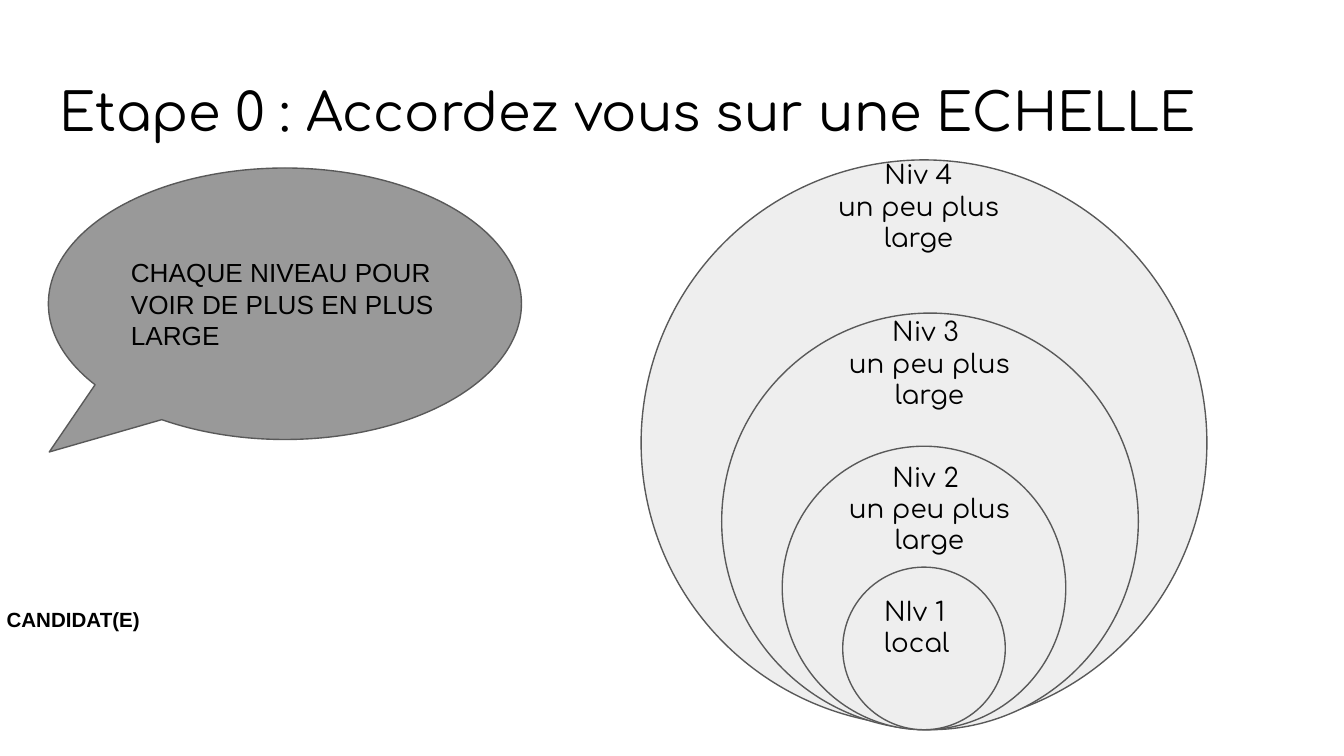
import pptx
import pptx.dml.color
import pptx.enum.shapes
import pptx.enum.text
import pptx.util

Inches = pptx.util.Inches
Pt = pptx.util.Pt
MSO_SHAPE = pptx.enum.shapes.MSO_SHAPE
PP_ALIGN = pptx.enum.text.PP_ALIGN
MSO_ANCHOR = pptx.enum.text.MSO_ANCHOR

HEADING_FONT = "Comfortaa"
BODY_FONT = "Arial"
LINE_PITCH = 1.2


def color(hex_value):
    """Return the colour for a hex string."""
    return pptx.dml.color.RGBColor.from_string(hex_value)


def write_text(frame, text, size, font, align=PP_ALIGN.LEFT, anchor=MSO_ANCHOR.TOP, bold=False):
    """Fill a text frame and format all of its paragraphs."""
    frame.text = text
    frame.word_wrap = True
    frame.auto_size = pptx.enum.text.MSO_AUTO_SIZE.NONE
    frame.vertical_anchor = anchor
    frame.margin_left = frame.margin_right = Inches(0.1)
    frame.margin_top = frame.margin_bottom = Inches(0.1)
    for paragraph in frame.paragraphs:
        paragraph.alignment = align
        paragraph.line_spacing = Pt(size * LINE_PITCH)
        paragraph.space_before = Pt(0)
        for run in paragraph.runs:
            run.font.size = Pt(size)
            run.font.name = font
            run.font.bold = bold
            run.font.color.rgb = color("000000")


def add_title(slide, text):
    """Place and format the title."""
    title = slide.shapes.title
    title.left, title.top = Inches(0.34), Inches(0.49)
    title.width, title.height = Inches(9.32), Inches(0.63)
    write_text(title.text_frame, text, 28, HEADING_FONT)


def add_outlined_shape(slide, kind, left, top, width, height, fill):
    """Add a filled shape with a thin grey outline."""
    shape = slide.shapes.add_shape(kind, Inches(left), Inches(top), Inches(width), Inches(height))
    shape.shadow.inherit = False
    shape.fill.solid()
    shape.fill.fore_color.rgb = color(fill)
    shape.line.color.rgb = color("595959")
    shape.line.width = Pt(0.75)
    return shape


def add_level(slide, left, top, diameter):
    """Add one circle of the scale."""
    add_outlined_shape(slide, MSO_SHAPE.OVAL, left, top, diameter, diameter, "EEEEEE")


def add_label(slide, left, top, width, height, text, size, font, **style):
    """Add a text box."""
    label = slide.shapes.add_textbox(Inches(left), Inches(top), Inches(width), Inches(height))
    write_text(label.text_frame, text, size, font, **style)


def add_callout(slide, text):
    """Add the speech bubble with its tail at the lower left."""
    bubble = add_outlined_shape(
        slide, MSO_SHAPE.OVAL_CALLOUT, 0.36, 1.25, 3.52, 2.02, "999999")
    bubble.adjustments[0] = -0.498
    bubble.adjustments[1] = 0.546
    write_text(bubble.text_frame, text, 14, BODY_FONT, anchor=MSO_ANCHOR.MIDDLE)


def main():
    """Build and save the slide."""
    deck = pptx.Presentation()
    deck.slide_width, deck.slide_height = Inches(10), Inches(10 * 9 / 16)
    slide = deck.slides.add_slide(deck.slide_layouts[5])

    add_title(slide, "Etape 0 : Accordez vous sur une ECHELLE")
    levels = [(4.77, 1.19, 4.21), (5.37, 2.33, 3.1), (5.82, 3.32, 2.11), (6.27, 4.22, 1.21)]
    for left, top, diameter in levels:
        add_level(slide, left, top, diameter)

    add_callout(slide, "CHAQUE NIVEAU POUR VOIR DE PLUS EN PLUS LARGE")
    add_label(slide, -0.05, 4.42, 1.55, 3.1, "CANDIDAT(E)", 11, BODY_FONT, bold=True)

    add_label(slide, 6.48, 4.33, 0.78, 0.23, "NIv 1 local", 14, HEADING_FONT)
    for level, left, top in [("Niv 2 ", 6.14, 3.33), ("Niv 3 ", 6.14, 2.25), ("Niv 4", 6.06, 1.08)]:
        add_label(slide, left, top, 1.55, 0.23, f"{level}\nun peu plus large",
                  14, HEADING_FONT, align=PP_ALIGN.CENTER)

    deck.save("out.pptx")


if __name__ == "__main__":
    main()
